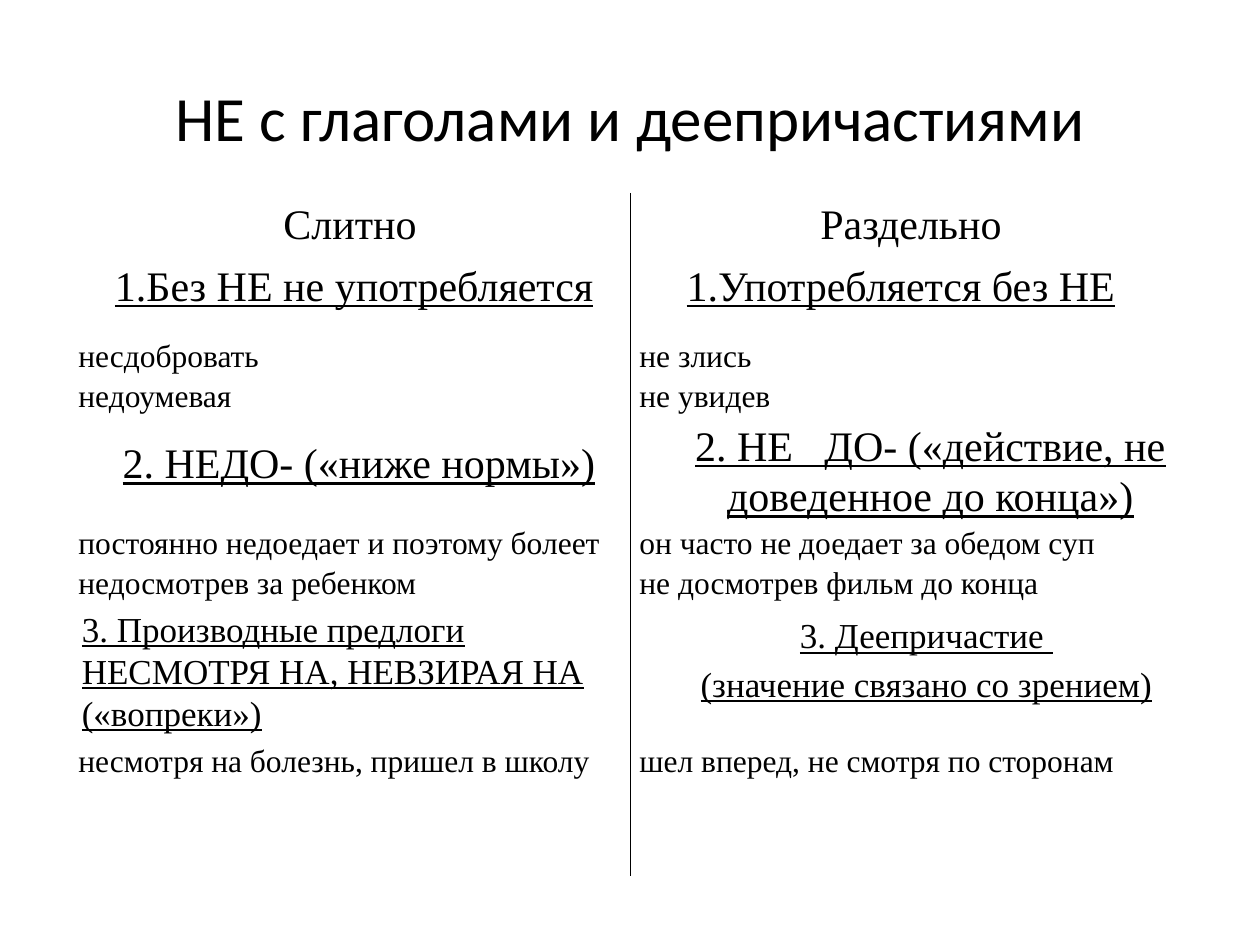
import pptx
import pptx.dml.color
import pptx.enum.text
import pptx.oxml
import pptx.oxml.ns
import pptx.util

Cm = pptx.util.Cm
Align = pptx.enum.text.PP_ALIGN
Anchor = pptx.enum.text.MSO_ANCHOR


def color(code):
    return pptx.dml.color.RGBColor.from_string(code)


def write(frame, text, size=24, font="Times New Roman", ink="000000",
          align=Align.CENTER, spacing=1.15, underline=False):
    for index, line in enumerate(text.split("\n")):
        paragraph = frame.paragraphs[0] if index == 0 else frame.add_paragraph()
        paragraph.alignment = align
        paragraph.line_spacing = spacing
        run = paragraph.add_run()
        run.text = line
        run.font.size = pptx.util.Pt(size)
        run.font.name = font
        run.font.color.rgb = color(ink)
        run.font.underline = underline


class RuleSlide:
    ink = "000000"
    divider_width = 12700
    cell_margin = Cm(0.18)

    def __init__(self, presentation):
        self.slide = presentation.slides.add_slide(presentation.slide_layouts[6])

    def text(self, text, left, top, width, height, anchor=Anchor.TOP, **style):
        box = self.slide.shapes.add_textbox(Cm(left), Cm(top), Cm(width), Cm(height))
        box.text_frame.word_wrap = True
        box.text_frame.vertical_anchor = anchor
        write(box.text_frame, text, ink=self.ink, **style)

    def heading(self, text, left, top, width, height, **style):
        self.text(text, left, top, width, height, underline=True, **style)

    def border(self, cell, divider_side):
        properties = cell._tc.get_or_add_tcPr()
        for index, side in enumerate("LRTB"):
            paint = "<a:noFill/>"
            if side == divider_side:
                paint = f'<a:solidFill><a:srgbClr val="{self.ink}"/></a:solidFill>'
            line = pptx.oxml.parse_xml(
                f'<a:ln{side} {pptx.oxml.ns.nsdecls("a")} '
                f'w="{self.divider_width}">{paint}</a:ln{side}>')
            properties.insert(index, line)

    def table(self, rows, left, top, column_width):
        total_height = sum(height for height, _ in rows)
        table = self.slide.shapes.add_table(
            len(rows), 2, Cm(left), Cm(top), Cm(2 * column_width), Cm(total_height)).table
        table.first_row = table.horz_banding = False
        for column in table.columns:
            column.width = Cm(column_width)
        for row, (height, texts) in zip(table.rows, rows):
            row.height = Cm(height)
            is_header = row is table.rows[0] or texts == COLUMN_TITLES
            for cell, text, divider_side in zip(row.cells, texts, "RL"):
                cell.fill.background()
                cell.margin_left = cell.margin_right = self.cell_margin
                cell.margin_top = cell.margin_bottom = 0
                self.border(cell, divider_side)
                if is_header:
                    cell.vertical_anchor = Anchor.MIDDLE
                    write(cell.text_frame, text, ink=self.ink)
                elif text:
                    write(cell.text_frame, text, size=18, ink=self.ink,
                          align=Align.JUSTIFY)


COLUMN_TITLES = ("Слитно", "Раздельно")
HEADING_ROW = ("", "")
ROWS = [
    (1.09, COLUMN_TITLES),
    (1.68, HEADING_ROW),
    (1.98, ("несдобровать\nнедоумевая", "не злись\nне увидев")),
    (1.78, HEADING_ROW),
    (2.01, ("постоянно недоедает и поэтому болеет\nнедосмотрев за ребенком",
            "он часто не доедает за обедом суп\nне досмотрев фильм до конца")),
    (2.39, HEADING_ROW),
    (2.77, ("несмотря на болезнь, пришел в школу",
            "шел вперед, не смотря по сторонам")),
]


def main():
    presentation = pptx.Presentation()
    presentation.slide_width = Cm(25.4)
    presentation.slide_height = Cm(19.05)
    rules = RuleSlide(presentation)

    rules.text("НЕ с глаголами и деепричастиями", 1.27, 0.76, 22.86, 3.18,
               anchor=Anchor.MIDDLE, size=36, font="Calibri", spacing=1.0)
    rules.table(ROWS, left=1.4, top=3.89, column_width=11.31)

    rules.heading("1.Без НЕ не употребляется", 1.78, 4.95, 10.72, 1.45)
    rules.heading("1.Употребляется без НЕ", 12.9, 4.95, 10.52, 1.45)
    rules.heading("2. НЕДО- («ниже нормы»)", 2.18, 8.53, 10.11, 1.35)
    rules.heading("2. НЕ   ДО- («действие, не доведенное до конца»)",
                  12.9, 8.33, 11.71, 2.31, spacing=1.0)
    rules.heading("3. Производные предлоги НЕСМОТРЯ НА, НЕВЗИРАЯ НА («вопреки»)",
                  1.4, 12.12, 11.13, 2.82, size=20, align=Align.LEFT, spacing=1.0)
    rules.heading("3. Деепричастие \n(значение связано со зрением)",
                  13.11, 12.12, 11.13, 2.13, size=20)

    presentation.save("out.pptx")


if __name__ == "__main__":
    main()
